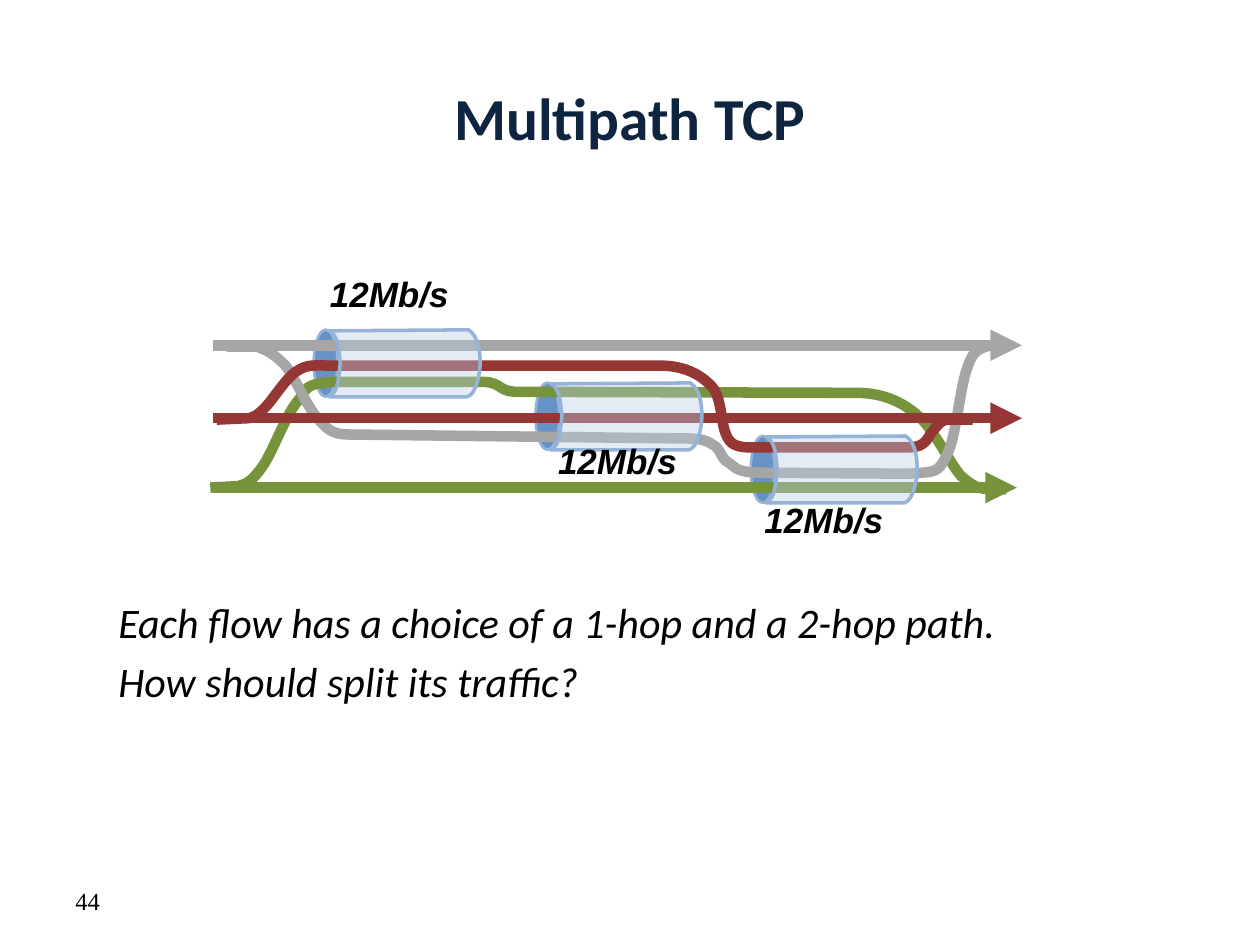
from dataclasses import dataclass

from lxml.etree import SubElement
from pptx import Presentation
from pptx.dml.color import RGBColor
from pptx.enum.shapes import MSO_CONNECTOR, MSO_SHAPE
from pptx.enum.text import MSO_ANCHOR as Anchor, MSO_AUTO_SIZE as AutoSize, PP_ALIGN as Align
from pptx.oxml.ns import qn
from pptx.util import Cm, Pt

Segment = tuple[float, ...]


@dataclass(frozen=True)
class Theme:
    title: str = "0F243E"
    text: str = "000000"
    green: str = "77933C"
    gray: str = "A6A6A6"
    red: str = "953735"
    pipe: str = "B9CDE5"
    pipe_end: str = "6792C5"
    pipe_line: str = "95B3D7"
    pipe_alpha: int = 40
    font: str = "Calibri"
    label_font: str = "Arial"
    number_font: str = "Times New Roman"
    title_size: int = 34
    body_size: int = 24
    label_size: int = 20
    number_size: int = 14
    flow_width: float = 6
    pipe_width: float = 2
    end_width: float = 1.5


@dataclass(frozen=True)
class Flow:
    color: str
    y: float
    end: float
    two_hop: tuple[Segment, ...]


@dataclass(frozen=True)
class Pipe:
    x: float
    y: float
    label_x: float
    label_y: float
    label_width: float


THEME = Theme()
FLOW_START = 4.29
PIPE_HEIGHT = 1.35
END_WIDTH = 0.48

FLOWS = (
    Flow(THEME.green, 9.83, 20.5, (
        (4.24, 9.83), (4.8, 9.8),
        (4.98, 9.75, 5.08, 9.7, 5.28, 9.42),
        (5.49, 9.14, 5.74, 8.41, 5.99, 8.1),
        (6.22, 7.82, 6.1, 7.75, 6.71, 7.7),
        (9.58, 7.7),
        (9.73, 7.7, 9.91, 7.67, 10.11, 7.82),
        (10.26, 7.92, 10.46, 7.9, 10.62, 7.9),
        (17.27, 7.92),
        (17.83, 7.92, 18.26, 8.13, 18.59, 8.46),
        (18.9, 8.79, 19.2, 9.42, 19.38, 9.6),
        (19.56, 9.75, 19.69, 9.86, 19.94, 9.86),
        (20.29, 9.86))),
    Flow(THEME.gray, 6.96, 20.6, (
        (4.57, 6.99), (5.18, 6.99),
        (5.38, 7.06, 5.54, 7.14, 5.77, 7.39),
        (5.97, 7.65, 6.2, 8.23, 6.43, 8.46),
        (6.63, 8.71, 6.78, 8.76, 7.04, 8.76),
        (13.82, 8.84),
        (14.17, 8.84, 14.25, 8.89, 14.38, 8.97),
        (14.53, 9.04, 14.53, 9.25, 14.68, 9.32),
        (14.83, 9.42, 14.81, 9.5, 15.24, 9.53),
        (18.34, 9.55),
        (18.87, 9.5, 18.9, 9.55, 19.08, 9.19),
        (19.28, 8.84, 19.35, 7.77, 19.51, 7.39),
        (19.63, 7.01, 19.79, 7.04, 19.94, 6.96),
        (20.35, 6.99))),
    Flow(THEME.red, 8.43, 20.6, (
        (4.37, 8.46), (5.03, 8.43),
        (5.16, 8.38, 5.18, 8.38, 5.33, 8.23),
        (5.49, 8.08, 5.74, 7.65, 5.97, 7.49),
        (6.2, 7.34, 6.3, 7.37, 6.68, 7.37),
        (13.28, 7.37),
        (13.79, 7.37, 14.1, 7.54, 14.33, 7.77),
        (14.55, 7.98, 14.53, 8.51, 14.63, 8.74),
        (14.71, 8.97, 14.86, 9.02, 15.14, 9.02),
        (18.31, 9.02),
        (18.57, 9.02, 18.67, 8.92, 18.75, 8.76),
        (18.85, 8.64, 18.95, 8.48, 19.08, 8.46),
        (19.2, 8.46, 19.43, 8.46, 19.61, 8.46))),
)

PIPES = (
    Pipe(6.63, 6.65, 6.4, 5.36, 3),
    Pipe(11.1, 7.72, 11, 8.74, 3.23),
    Pipe(15.44, 8.79, 15.16, 9.93, 3.43),
)

PIPE_OUTLINE: tuple[Segment, ...] = (
    (0, PIPE_HEIGHT), (2.79, PIPE_HEIGHT),
    (2.97, 1.3, 3.05, 0.89, 3.05, 0.66),
    (3.05, 0.46, 3.02, 0.13, 2.82, 0),
    (0, 0.02),
    (0.2, 0.1, 0.2, 0.43, 0.23, 0.66),
    (0.2, 0.91, 0.2, 1.27, 0, PIPE_HEIGHT),
)


def set_line(sp, color: str, width: float) -> None:
    sp.line.color.rgb = RGBColor.from_string(color)
    sp.line.width = Pt(width)


def set_fill(sp, color: str) -> None:
    sp.fill.solid()
    sp.fill.fore_color.rgb = RGBColor.from_string(color)


def add_outline(shapes, segments: tuple[Segment, ...], dx: float = 0, dy: float = 0,
                close: bool = False):
    ends = [(Cm(seg[-2] + dx), Cm(seg[-1] + dy)) for seg in segments]
    builder = shapes.build_freeform(*ends[0])
    builder.add_line_segments(ends[1:], close=close)
    sp = builder.convert_to_shape()
    sp.shadow.inherit = False
    for step, seg in zip(list(sp._element.iter(qn("a:lnTo"))), segments[1:]):
        if len(seg) == 6:
            curve = step.makeelement(qn("a:cubicBezTo"))
            for x, y in zip(seg[::2], seg[1::2]):
                SubElement(curve, qn("a:pt"), x=str(Cm(x + dx) - sp.left),
                           y=str(Cm(y + dy) - sp.top))
            step.getparent().replace(step, curve)
    return sp


def add_flow(s, flow: Flow) -> None:
    shapes = s.shapes.add_group_shape().shapes
    direct = shapes.add_connector(MSO_CONNECTOR.STRAIGHT, Cm(FLOW_START), Cm(flow.y),
                                  Cm(flow.end), Cm(flow.y))
    set_line(direct, flow.color, THEME.flow_width)
    SubElement(direct.line._get_or_add_ln(), qn("a:tailEnd"), type="triangle")
    SubElement(direct._element.spPr, qn("a:effectLst"))
    detour = add_outline(shapes, flow.two_hop)
    detour.fill.background()
    set_line(detour, flow.color, THEME.flow_width)


def add_pipe_end(s, pipe: Pipe) -> None:
    sp = s.shapes.add_shape(MSO_SHAPE.OVAL, Cm(pipe.x - 0.74), Cm(pipe.y + 0.43),
                            Cm(PIPE_HEIGHT), Cm(END_WIDTH))
    sp.rotation = 270
    sp.shadow.inherit = False
    set_fill(sp, THEME.pipe_end)
    set_line(sp, THEME.pipe_line, THEME.end_width)


def add_pipe(s, pipe: Pipe) -> None:
    sp = add_outline(s.shapes, PIPE_OUTLINE, pipe.x, pipe.y, close=True)
    set_fill(sp, THEME.pipe)
    color = sp._element.spPr.find(qn("a:solidFill"))[0]
    SubElement(color, qn("a:alpha"), val=str(THEME.pipe_alpha * 1000))
    set_line(sp, THEME.pipe_line, THEME.pipe_width)


def place(sp, x: float, y: float, w: float, h: float) -> None:
    sp.left, sp.top, sp.width, sp.height = Cm(x), Cm(y), Cm(w), Cm(h)


def write(sp, lines: tuple[str, ...], font: str, size: int, color: str, anchor: Anchor,
          bold: bool = False, italic: bool = False) -> None:
    tf = sp.text_frame
    tf.word_wrap, tf.auto_size, tf.vertical_anchor = True, AutoSize.NONE, anchor
    tf.text = "\n".join(lines)
    for p in tf.paragraphs:
        p.font.name, p.font.size = font, Pt(size)
        p.font.bold, p.font.italic = bold, italic
        p.font.color.rgb = RGBColor.from_string(color)


def add_text(s, text: str, box: tuple[float, ...], font: str, size: int, anchor: Anchor,
             strong: bool = False) -> None:
    sp = s.shapes.add_textbox(*map(Cm, box))
    write(sp, (text,), font, size, THEME.text, anchor, strong, strong)


def main() -> None:
    prs = Presentation()
    prs.slide_width, prs.slide_height = Cm(25.4), Cm(19.05)
    s = prs.slides.add_slide(prs.slide_layouts[1])
    title, body = s.placeholders
    place(title, 1.27, 0.76, 22.86, 3.18)
    write(title, ("Multipath TCP",), THEME.font, THEME.title_size, THEME.title,
          Anchor.MIDDLE, bold=True)
    title.text_frame.paragraphs[0].alignment = Align.CENTER
    add_text(s, "44", (1.27, 17.65, 5.92, 1.02), THEME.number_font, THEME.number_size,
             Anchor.MIDDLE)
    place(body, 2.13, 5.16, 21.59, 9.19)
    write(body, ("Each flow has a choice of a 1-hop and a 2-hop path.",
                 "How should split its traffic?"),
          THEME.font, THEME.body_size, THEME.text, Anchor.BOTTOM, italic=True)
    for p in body.text_frame.paragraphs:
        p.space_before = Pt(THEME.body_size * 0.2)
        pPr = p._p.get_or_add_pPr()
        pPr.set("marL", "0")
        pPr.set("indent", "0")
        pPr.insert_element_before(pPr.makeelement(qn("a:buNone")), "a:tabLst", "a:defRPr")
    for pipe in PIPES:
        add_pipe_end(s, pipe)
    for flow in FLOWS:
        add_flow(s, flow)
    for pipe in PIPES:
        add_pipe(s, pipe)
    for pipe in PIPES:
        add_text(s, "12Mb/s", (pipe.label_x, pipe.label_y, pipe.label_width, 1.12),
                 THEME.label_font, THEME.label_size, Anchor.TOP, strong=True)
    prs.save("out.pptx")


if __name__ == "__main__":
    main()
